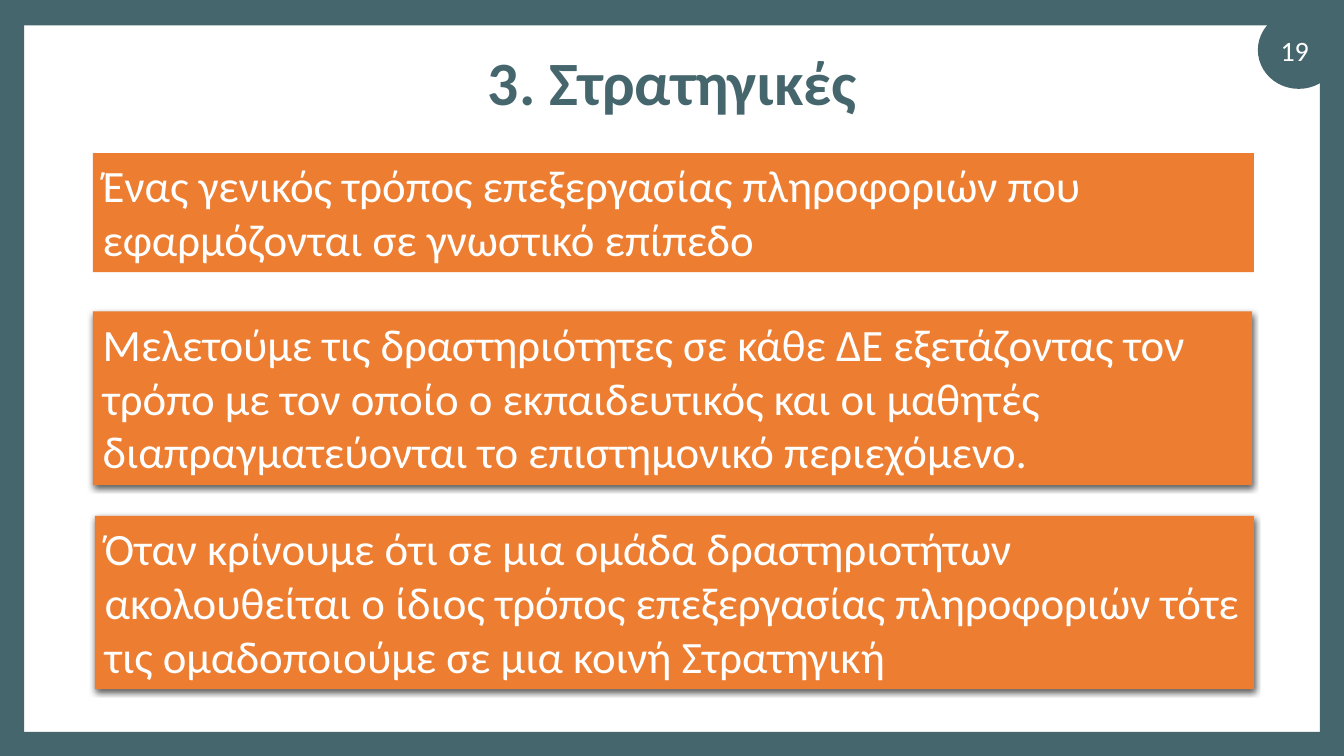
"""Build the slide on strategies: a framed page with a title and three cards."""
from dataclasses import dataclass

from lxml.etree import SubElement
from pptx import Presentation
from pptx.dml.color import RGBColor
from pptx.enum.shapes import MSO_SHAPE
from pptx.enum.text import MSO_ANCHOR, MSO_AUTO_SIZE, PP_ALIGN
from pptx.oxml.ns import qn
from pptx.util import Cm, Pt


@dataclass(frozen=True)
class Theme:
    teal: str = "46666D"
    orange: str = "ED7D31"
    white: str = "FFFFFF"
    black: str = "000000"
    font: str = "Calibri"
    title: int = 44
    body: int = 32
    page: int = 20


THEME = Theme()
WIDE, HIGH = 33.87, 19.05
EDGE = 0.61

CARDS = [
    ("Ένας γενικός τρόπος επεξεργασίας πληροφοριών που "
     "εφαρμόζονται σε γνωστικό επίπεδο",
     (2.34, 3.86, 29.26, 3), False),
    ("Μελετούμε τις δραστηριότητες σε κάθε ΔΕ εξετάζοντας τον "
     "τρόπο με τον οποίο ο εκπαιδευτικός και οι μαθητές "
     "διαπραγματεύονται το επιστημονικό περιεχόμενο.",
     (2.34, 7.85, 29.21, 4.37), True),
    ("Όταν κρίνουμε ότι σε μια ομάδα δραστηριοτήτων "
     "ακολουθείται ο ίδιος τρόπος επεξεργασίας πληροφοριών τότε "
     "τις ομαδοποιούμε σε μια κοινή Στρατηγική",
     (2.39, 13, 29.21, 4.37), True),
]


def write(shape, text, size, color=THEME.white, bold=False,
          align=PP_ALIGN.LEFT, anchor=MSO_ANCHOR.TOP, space=1.0):
    frame = shape.text_frame
    frame.word_wrap = True
    frame.auto_size = MSO_AUTO_SIZE.NONE
    frame.vertical_anchor = anchor
    line = frame.paragraphs[0]
    line.alignment = align
    line.line_spacing = space
    run = line.add_run()
    run.text = text
    run.font.name = THEME.font
    run.font.size = Pt(size)
    run.font.bold = bold
    run.font.color.rgb = RGBColor.from_string(color)


def add_block(slide, box, color, kind=MSO_SHAPE.RECTANGLE):
    shape = slide.shapes.add_shape(kind, *map(Cm, box))
    shape.shadow.inherit = False
    shape.fill.solid()
    shape.fill.fore_color.rgb = RGBColor.from_string(color)
    shape.line.fill.background()
    return shape


def add_shade(shape):
    effects = shape.element.spPr.find(qn("a:effectLst"))
    shade = SubElement(effects, qn("a:outerShdw"), blurRad=str(Pt(4.5)),
                       dist=str(Pt(1.5)), dir="5400000", algn="ctr",
                       rotWithShape="0")
    tone = SubElement(shade, qn("a:srgbClr"), val=THEME.black)
    SubElement(tone, qn("a:alpha"), val="63000")


def add_frame(slide):
    for box in [(0, 0, WIDE, EDGE + 0.03), (0, HIGH - EDGE, WIDE, EDGE),
                (0, 0, EDGE, HIGH), (WIDE - EDGE, 0, EDGE, HIGH)]:
        add_block(slide, box, THEME.teal)


def add_title(slide, text):
    title = slide.shapes.title
    title.left, title.top, title.width, title.height = map(
        Cm, (2.34, 1.02, 29.21, 2.26))
    write(title, text, THEME.title, color=THEME.teal, bold=True,
          align=PP_ALIGN.CENTER, anchor=MSO_ANCHOR.MIDDLE, space=0.9)


def add_page(slide, text):
    add_block(slide, (31.7, 0.28, 2.06, 1.96), THEME.teal, MSO_SHAPE.OVAL)
    label = slide.shapes.add_textbox(*map(Cm, (31.6, 0.76, 2.06, 1.02)))
    write(label, text, THEME.page, align=PP_ALIGN.CENTER,
          anchor=MSO_ANCHOR.MIDDLE)


def add_card(slide, text, box, shaded):
    card = add_block(slide, box, THEME.orange)
    if shaded:
        add_shade(card)
    write(card, text, THEME.body)


def main():
    deck = Presentation()
    deck.slide_width, deck.slide_height = Cm(WIDE), Cm(HIGH)
    slide = deck.slides.add_slide(deck.slide_layouts.get_by_name("Title Only"))
    add_frame(slide)
    add_title(slide, "3. Στρατηγικές")
    add_page(slide, "19")
    for text, box, shaded in CARDS:
        add_card(slide, text, box, shaded)
    deck.save("out.pptx")


if __name__ == "__main__":
    main()
